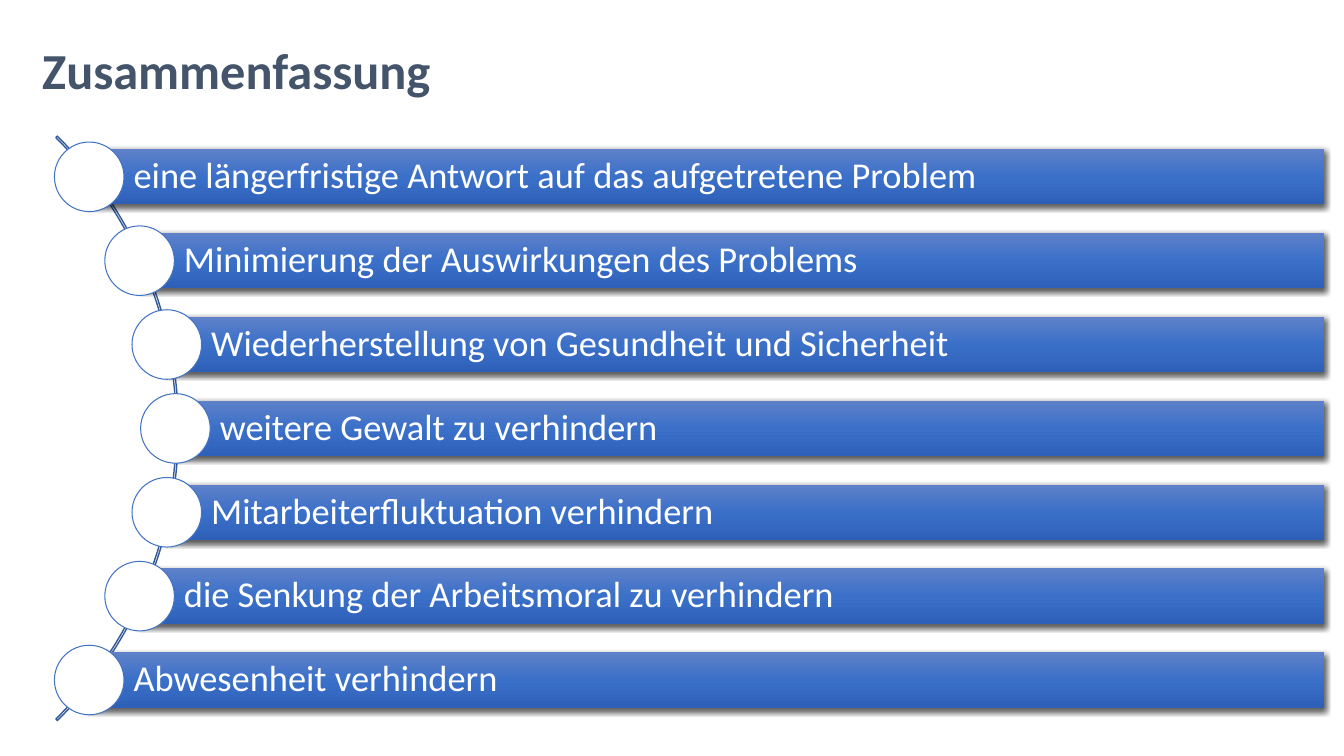
from copy import deepcopy
from math import sqrt

from pptx import Presentation
from pptx.dml.color import RGBColor
from pptx.enum.shapes import MSO_SHAPE as Preset
from pptx.enum.text import MSO_ANCHOR as Anchor, PP_ALIGN as Align
from pptx.oxml import parse_xml
from pptx.oxml.ns import nsdecls
from pptx.util import Inches, Pt

WHITE = RGBColor(0xFF, 0xFF, 0xFF)
TITLE_COLOR = RGBColor(0x44, 0x54, 0x6A)
ARC_COLOR = RGBColor(0x34, 0x5A, 0x99)
RING_COLOR = RGBColor(0x43, 0x72, 0xC3)
BAR_STOPS = [
    (0, RGBColor(0x5E, 0x81, 0xC9)),
    (0.5, RGBColor(0x3B, 0x70, 0xC9)),
    (1, RGBColor(0x2E, 0x60, 0xB8)),
]

TITLE = "Zusammenfassung"
POINTS = [
    "eine längerfristige Antwort auf das aufgetretene Problem",
    "Minimierung der Auswirkungen des Problems",
    "Wiederherstellung von Gesundheit und Sicherheit",
    "weitere Gewalt zu verhindern",
    "Mitarbeiterfluktuation verhindern",
    "die Senkung der Arbeitsmoral zu verhindern",
    "Abwesenheit verhindern",
]
TITLE_FONT = {"name": "Calibri", "size": Pt(36), "bold": True}
BAR_FONT = {"name": "Calibri", "size": Pt(26)}

ARC_SIZE = 8.2
ARC_CENTER_X = -2.33
CIRCLE_PATH_RADIUS = 4.07
ROW_PITCH = 0.832
BAR_HEIGHT = 0.55
CIRCLE_SIZE = 0.69


def write_text(shape, text, font, color, insets, spacing=None):
    """Write one left-aligned, vertically centred line into a shape."""
    frame = shape.text_frame
    frame.word_wrap = True
    frame.vertical_anchor = Anchor.MIDDLE
    for side, inset in zip(("left", "top", "right", "bottom"), insets):
        setattr(frame, f"margin_{side}", Inches(inset))
    para = frame.paragraphs[0]
    para.alignment = Align.LEFT
    if spacing:
        para.line_spacing = spacing
    span = para.add_run()
    span.text = text
    for name, value in font.items():
        setattr(span.font, name, value)
    span.font.color.rgb = color


def add_plain_shape(page, preset, left, top, width, height):
    """Add a preset shape without the theme shadow."""
    lengths = [Inches(value) for value in (left, top, width, height)]
    shape = page.shapes.add_shape(preset, *lengths)
    shape.shadow.inherit = False
    return shape


def fill_bar(bar):
    """Give a bar its three-stop gradient and its soft shadow."""
    bar.line.fill.background()
    bar.fill.gradient()
    bar.fill.gradient_angle = 270
    stop_list = bar._element.xpath("./p:spPr/a:gradFill/a:gsLst")[0]
    stop_list.append(deepcopy(stop_list[-1]))
    for stop, (position, color) in zip(bar.fill.gradient_stops, BAR_STOPS):
        stop.position = position
        stop.color.rgb = color
    effects = bar._element.xpath("./p:spPr/a:effectLst")[0]
    effects.append(parse_xml(
        f'<a:outerShdw {nsdecls("a")} blurRad="57150" dist="19050" '
        'dir="5400000" algn="ctr" rotWithShape="0">'
        '<a:srgbClr val="000000"><a:alpha val="63000"/></a:srgbClr>'
        '</a:outerShdw>'))


def add_title(page, left, top, width, height):
    """Place the slide title in the given box."""
    box = page.shapes.add_textbox(*map(Inches, (left, top, width, height)))
    write_text(box, TITLE, TITLE_FONT, TITLE_COLOR, (0.1, 0.05, 0.1, 0.05))


def add_arc(page, center_x, center_y):
    """Draw the thin arc that carries the circles."""
    arc = add_plain_shape(page, Preset.BLOCK_ARC, center_x - ARC_SIZE / 2,
                          center_y - ARC_SIZE / 2, ARC_SIZE, ARC_SIZE)
    for index, value in enumerate((189, 27, 0.0026)):
        arc.adjustments[index] = value
    arc.fill.background()
    arc.line.color.rgb = ARC_COLOR
    arc.line.width = Pt(1)


def add_point(page, text, center_x, center_y, right):
    """Place one bar from its circle's centre to the right edge."""
    bar = add_plain_shape(page, Preset.RECTANGLE, center_x,
                          center_y - BAR_HEIGHT / 2, right - center_x, BAR_HEIGHT)
    fill_bar(bar)
    write_text(bar, text, BAR_FONT, WHITE, (0.44, 0.07, 0.07, 0.07), 0.9)
    circle = add_plain_shape(page, Preset.OVAL, center_x - CIRCLE_SIZE / 2,
                             center_y - CIRCLE_SIZE / 2, CIRCLE_SIZE, CIRCLE_SIZE)
    circle.fill.solid()
    circle.fill.fore_color.rgb = WHITE
    circle.line.color.rgb = RING_COLOR
    circle.line.width = Pt(0.75)


def add_curved_list(page, right, center_y):
    """Spread the points evenly down the arc around a middle height."""
    add_arc(page, ARC_CENTER_X, center_y)
    for index, text in enumerate(POINTS):
        offset = (index - (len(POINTS) - 1) / 2) * ROW_PITCH
        center_x = ARC_CENTER_X + sqrt(CIRCLE_PATH_RADIUS ** 2 - offset ** 2)
        add_point(page, text, center_x, center_y + offset, right)


def main():
    """Build and save the summary slide."""
    deck = Presentation()
    deck.slide_width = Inches(13.33)
    deck.slide_height = Inches(7.5)
    page = deck.slides.add_slide(deck.slide_layouts[6])
    add_curved_list(page, right=13.13, center_y=4.25)
    add_title(page, 0.32, 0.2, 12.89, 0.97)
    deck.save("out.pptx")


if __name__ == "__main__":
    main()
